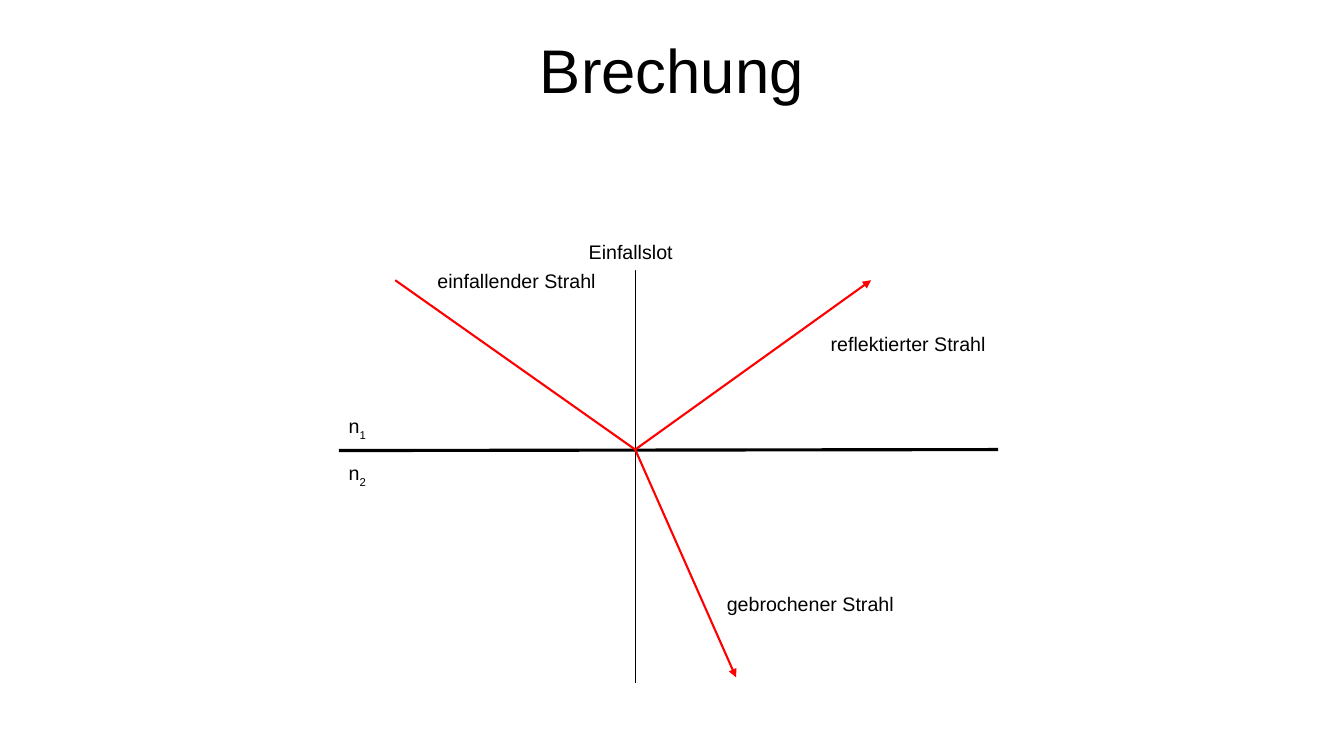
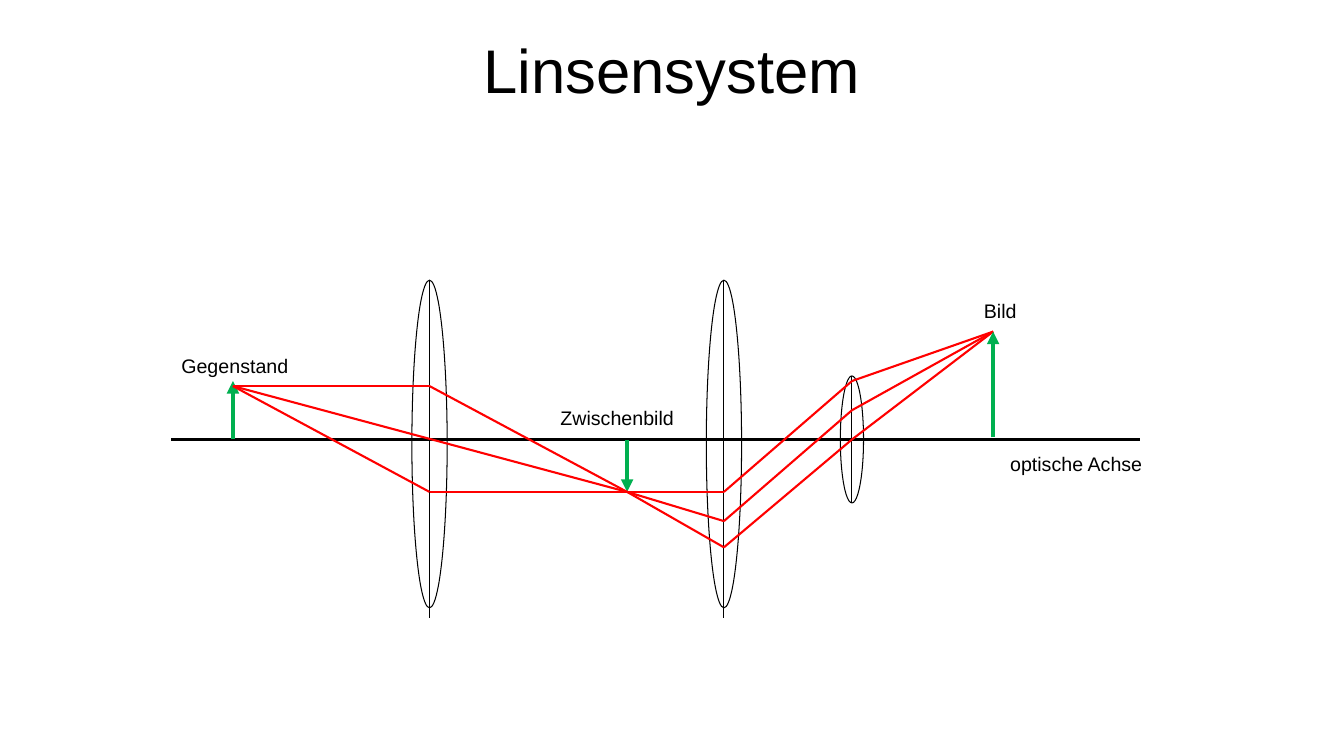
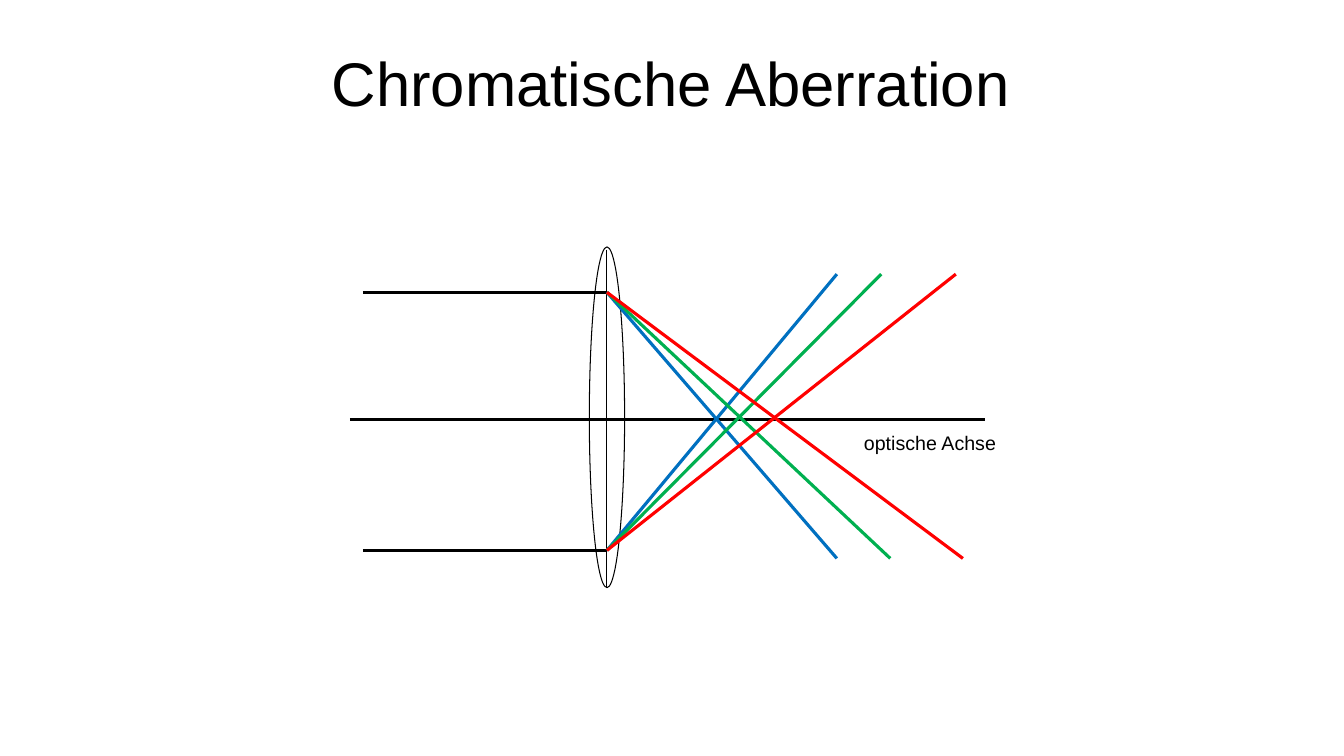
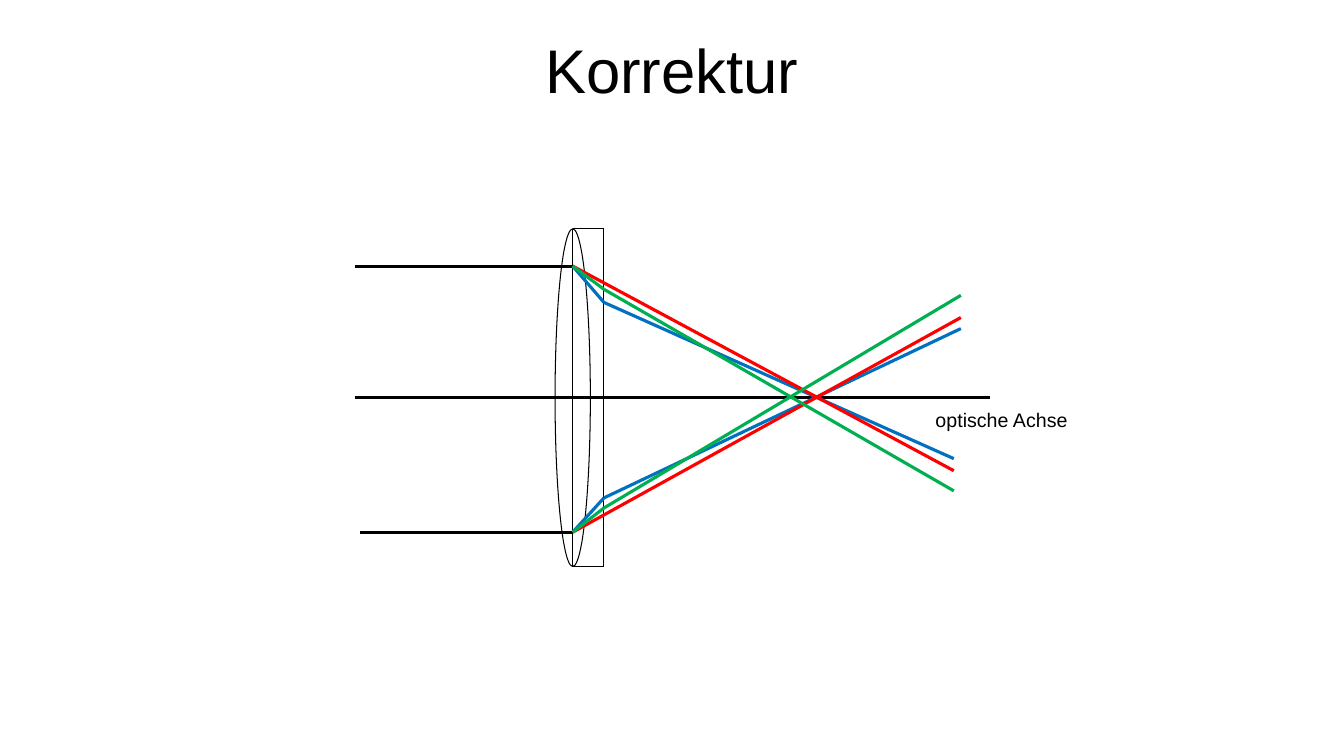
from itertools import pairwise

from lxml.etree import SubElement
from pptx import Presentation
from pptx.dml.color import RGBColor
from pptx.enum.shapes import MSO_CONNECTOR, MSO_SHAPE
from pptx.enum.text import MSO_ANCHOR, PP_ALIGN
from pptx.oxml.ns import qn
from pptx.util import Emu, Pt

# Shared look
COLORS = {
    "black": "000000",
    "white": "FFFFFF",
    "red": "FF0000",
    "green": "00B050",
    "blue": "0070C0",
}
FONT = "Arial"
TITLE_SIZE, LABEL_SIZE = 44, 14
THIN, RAY, BOLD, ARROW = 0.75, 1.5, 2.25, 3
SLIDE_WIDTH, SLIDE_HEIGHT = 1333, 750
TITLE_HEIGHT = 145
LENS_WIDTH = 35


def px(length):
    """100 px make one inch."""
    return Emu(length * 9144)


def color(name):
    return RGBColor.from_string(COLORS[name])


def style_font(font, size):
    font.name = FONT
    font.size = Pt(size)
    font.color.rgb = color("black")


# Kinds of element
def add_titled_slide(prs, heading, left=0, top=0):
    slide = prs.slides.add_slide(prs.slide_layouts[5])
    title = slide.shapes.title
    title.left, title.top = px(left), px(top)
    title.width, title.height = px(SLIDE_WIDTH), px(TITLE_HEIGHT)
    title.text_frame.text = heading
    title.text_frame.vertical_anchor = MSO_ANCHOR.MIDDLE
    paragraph = title.text_frame.paragraphs[0]
    paragraph.alignment = PP_ALIGN.CENTER
    paragraph.line_spacing = 0.9
    style_font(paragraph.runs[0].font, TITLE_SIZE)
    return slide


def add_label(slide, text, left, top, width, height, subscript=None):
    label = slide.shapes.add_textbox(px(left), px(top), px(width), px(height))
    label.fill.solid()
    label.fill.fore_color.rgb = color("white")
    label.text_frame.word_wrap = True
    label.text_frame.text = text
    paragraph = label.text_frame.paragraphs[0]
    if subscript:
        index = paragraph.add_run()
        index.text = subscript
        index._r.get_or_add_rPr().set("baseline", "-30000")
    for run in paragraph.runs:
        style_font(run.font, LABEL_SIZE)


def add_line(slide, start, end, name="black", weight=THIN, arrow=False):
    line = slide.shapes.add_connector(
        MSO_CONNECTOR.STRAIGHT, *map(px, start), *map(px, end))
    line.line.color.rgb = color(name)
    line.line.width = Pt(weight)
    if arrow:
        SubElement(line.line._get_or_add_ln(), qn("a:tailEnd"), type="triangle")
    SubElement(line._element.spPr, qn("a:effectLst"))


def add_ray(slide, points, name, weight):
    """A light ray: straight pieces from point to point."""
    for start, end in pairwise(points):
        add_line(slide, start, end, name, weight)


def add_lens(slide, center, top, bottom, width=LENS_WIDTH):
    lens = slide.shapes.add_shape(
        MSO_SHAPE.OVAL, px(center) - px(width) // 2, px(top),
        px(width), px(bottom - top))
    lens.shadow.inherit = False
    lens.fill.background()
    lens.line.color.rgb = color("black")
    lens.line.width = Pt(THIN)


# Slides
def build_refraction(prs):
    slide = add_titled_slide(prs, "Brechung")
    hit = (630, 446)
    add_label(slide, "einfallender Strahl", 424, 262, 196, 40)
    add_line(slide, (336, 447), (990, 446), weight=BOLD)
    add_line(slide, (630, 233), (630, 678))
    add_line(slide, (392, 278), hit, "red", RAY)
    for tip in ((864, 278), (730, 672)):
        add_line(slide, hit, tip, "red", RAY, arrow=True)
    add_label(slide, "gebrochener Strahl", 711, 582, 238, 42)
    add_label(slide, "reflektierter Strahl", 814, 324, 183, 38)
    add_label(slide, "Einfallslot", 574, 233, 122, 35)
    for medium, top in (("1", 406), ("2", 452)):
        add_label(slide, "n", 336, top, 45, 33, subscript=medium)


def build_lens_system(prs):
    slide = add_titled_slide(prs, "Linsensystem")
    axis = 436
    add_label(slide, "Bild", 966, 292, 62, 36)
    add_label(slide, "Gegenstand", 170, 346, 164, 44)
    add_label(slide, "Zwischenbild", 546, 398, 141, 30)
    add_label(slide, "optische Achse", 992, 443, 171, 36)
    add_line(slide, (170, axis), (1131, axis), weight=BOLD)

    # Lenses with their planes
    for center in (426, 718):
        add_lens(slide, center, 278, 603)
        add_line(slide, (center, 278), (center, 613))
    add_lens(slide, 845, 373, 499, width=23)
    add_line(slide, (845, 373), (845, 499))

    # Object and intermediate image
    add_line(slide, (231, axis), (231, 378), "green", ARROW, arrow=True)
    add_line(slide, (622, 437), (622, 488), "green", ARROW, arrow=True)

    # Rays from the object through the intermediate image to the image
    source, crossing, image = (231, 383), (622, 488), (985, 329)
    rays = (
        ([(426, 383)], [(718, 543), (845, axis)]),
        ([], [(718, 517), (845, 407)]),
        ([(426, 488)], [(718, 488), (845, 378)]),
    )
    for before, after in rays:
        add_ray(slide, [source, *before, crossing, *after, image], "red", RAY)
    add_line(slide, (985, 434), image, "green", ARROW, arrow=True)


def build_aberration(prs):
    slide = add_titled_slide(prs, "Chromatische Aberration", left=-1, top=13)
    lens, upper, lower = 602, 290, 546
    add_line(slide, (347, 416), (977, 416), weight=BOLD)
    add_lens(slide, lens, 245, 583)
    add_label(slide, "optische Achse", 847, 423, 171, 36)
    add_line(slide, (lens, 248), (lens, 583))
    for height in (upper, lower):
        add_line(slide, (360, height), (lens, height), weight=BOLD)

    # Each colour has its own focus
    for name, rising_end, falling_end in (
            ("blue", 830, 830), ("green", 874, 883), ("red", 948, 955)):
        add_line(slide, (lens, lower), (rising_end, 272), name, BOLD)
        add_line(slide, (lens, upper), (falling_end, 554), name, BOLD)


def build_correction(prs):
    slide = add_titled_slide(prs, "Korrektur")
    lens, back, top, bottom = 568, 599, 227, 562
    upper, lower = 264, 528
    add_label(slide, "optische Achse", 918, 400, 171, 36)
    add_line(slide, (352, 394), (982, 394), weight=BOLD)

    # Convex lens with the flat lens behind it
    add_lens(slide, lens, top, bottom)
    add_line(slide, (lens, top), (lens, bottom))
    for edge in (top, bottom):
        add_line(slide, (lens, edge), (back, edge))
    add_line(slide, (back, top), (back, bottom))
    add_line(slide, (352, upper), (lens, upper), weight=BOLD)
    add_line(slide, (357, lower), (lens, lower), weight=BOLD)

    # Rays bent again at the back of the flat lens
    rays = (
        ("blue", [(back, 300)], 455, [(back, 494)], 326),
        ("red", [], 467, [], 315),
        ("green", [(back, 287)], 487, [(back, 504)], 293),
    )
    for name, upper_bend, falling_end, lower_bend, rising_end in rays:
        add_ray(slide, [(lens, upper), *upper_bend, (946, falling_end)], name, BOLD)
        add_ray(slide, [(lens, lower), *lower_bend, (953, rising_end)], name, BOLD)


def main():
    prs = Presentation()
    prs.slide_width, prs.slide_height = px(SLIDE_WIDTH), px(SLIDE_HEIGHT)
    build_refraction(prs)
    build_lens_system(prs)
    build_aberration(prs)
    build_correction(prs)
    prs.save("out.pptx")


if __name__ == "__main__":
    main()
